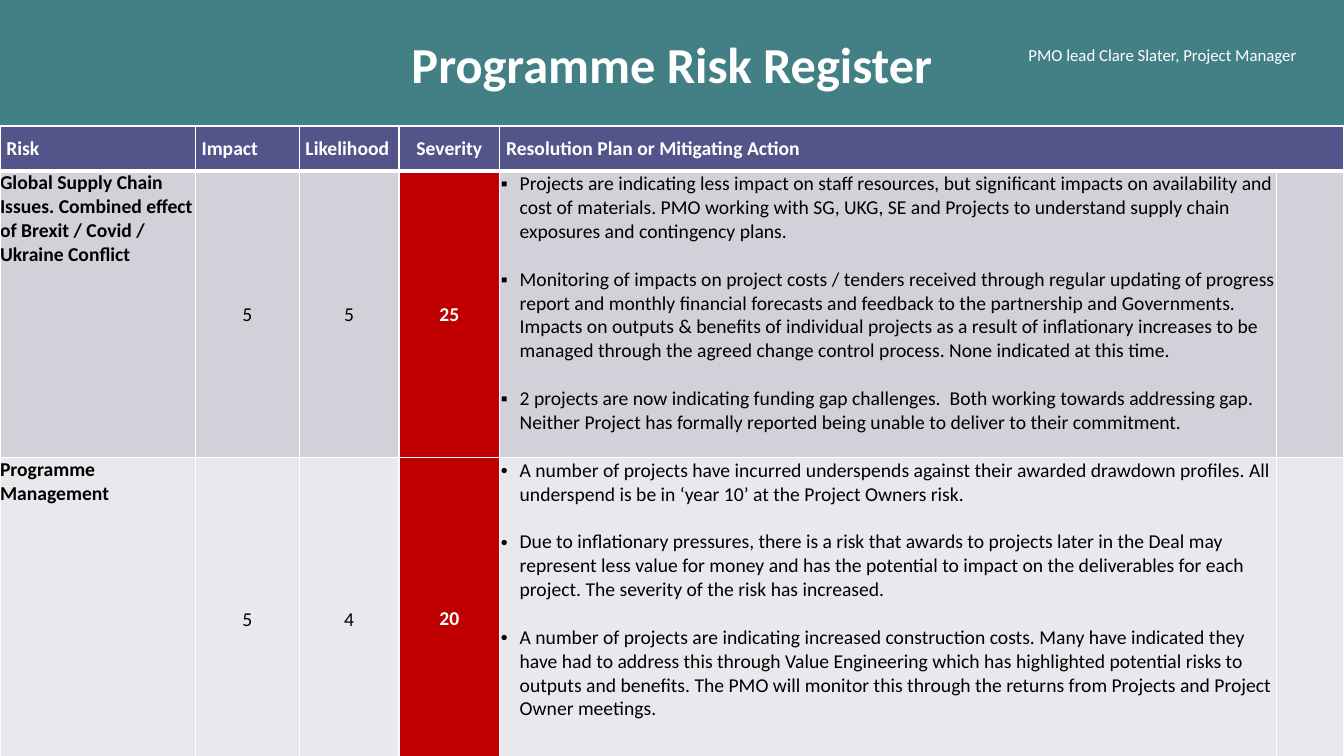
from lxml import etree
from pptx import Presentation
from pptx import util as u
from pptx.dml.color import RGBColor
from pptx.enum import text
from pptx.oxml import ns

PX = 9525
FONT = "Calibri"
WHITE = RGBColor(0xFF, 0xFF, 0xFF)
BLACK = RGBColor(0, 0, 0)
TEAL = RGBColor(0x43, 0x80, 0x86)
INDIGO = RGBColor(0x53, 0x54, 0x8A)
RED = RGBColor(0xC0, 0, 0)
BANDS = [RGBColor(0xD1, 0xD1, 0xDA), RGBColor(0xE9, 0xE9, 0xED)]

LEFT, CENTER = text.PP_ALIGN.LEFT, text.PP_ALIGN.CENTER
TOP, MIDDLE = text.MSO_ANCHOR.TOP, text.MSO_ANCHOR.MIDDLE
PADDED, TIGHT, FLUSH = (6, 3, 6, 3), (1, 1, 1, 0), (0, 0, 0, 0)

COLUMN_WIDTHS = [186, 99, 95, 96, 740, 64]
ROW_HEIGHTS = [43, 273, 307]
HEADINGS = ["Risk", "Impact", "Likelihood", "Severity",
            "Resolution Plan or Mitigating Action", ""]
RISKS = [
    ("Global Supply Chain Issues. Combined effect of Brexit / Covid / Ukraine Conflict",
     "5", "5", "25", "▪", [
         "Projects are indicating less impact on staff resources, but significant impacts on "
         "availability and cost of materials. PMO working with SG, UKG, SE and Projects to "
         "understand supply chain exposures and contingency plans.",
         "Monitoring of impacts on project costs / tenders received through regular updating of "
         "progress report and monthly financial forecasts and feedback to the partnership and "
         "Governments. Impacts on outputs & benefits of individual projects as a result of "
         "inflationary increases to be managed through the agreed change control process. "
         "None indicated at this time.",
         "2 projects are now indicating funding gap challenges.  Both working towards addressing "
         "gap. Neither Project has formally reported being unable to deliver to their commitment.",
     ]),
    ("Programme Management", "5", "4", "20", "•", [
        "A number of projects have incurred underspends against their awarded drawdown profiles. "
        "All underspend is be in ‘year 10’ at the Project Owners risk.",
        "Due to inflationary pressures, there is a risk that awards to projects later in the Deal "
        "may represent less value for money and has the potential to impact on the deliverables "
        "for each project. The severity of the risk has increased.",
        "A number of projects are indicating increased construction costs. Many have indicated "
        "they have had to address this through Value Engineering which has highlighted potential "
        "risks to outputs and benefits. The PMO will monitor this through the returns from "
        "Projects and Project Owner meetings.",
    ]),
]


def px(*lengths):
    return [length * PX for length in lengths]


def format_runs(paragraph, size, color, bold=False):
    for run in paragraph.runs:
        run.font.name = FONT
        run.font.size = u.Pt(size)
        run.font.bold = bold
        run.font.color.rgb = color


def add_bullet(paragraph, mark):
    properties = paragraph._p.get_or_add_pPr()
    properties.set("marL", str(18 * PX))
    properties.set("indent", str(-18 * PX))
    etree.SubElement(properties, ns.qn("a:buFont")).set("typeface", "Arial")
    etree.SubElement(properties, ns.qn("a:buChar")).set("char", mark)


def add_borders(cell, top=1, bottom=1):
    properties = cell._tc.get_or_add_tcPr()
    for side, width in (("L", 1), ("R", 1), ("T", top), ("B", bottom)):
        border = etree.SubElement(properties, ns.qn(f"a:ln{side}"), w=str(u.Pt(width)))
        paint = etree.SubElement(border, ns.qn("a:solidFill"))
        etree.SubElement(paint, ns.qn("a:srgbClr")).set("val", str(WHITE))


def style_cell(cell, fill, margins, anchor):
    cell.fill.solid()
    cell.fill.fore_color.rgb = fill
    (cell.margin_left, cell.margin_top,
     cell.margin_right, cell.margin_bottom) = px(*margins)
    cell.vertical_anchor = anchor


def write_cell(cell, wording, color, bold, align):
    cell.text_frame.text = wording
    paragraph = cell.text_frame.paragraphs[0]
    paragraph.alignment = align
    format_runs(paragraph, 14, color, bold)


def write_actions(cell, mark, actions):
    frame = cell.text_frame
    for number, action in enumerate(actions):
        paragraph = frame.add_paragraph() if number else frame.paragraphs[0]
        paragraph.text = action
        add_bullet(paragraph, mark)
        if number:
            paragraph.space_before = u.Pt(17)
        format_runs(paragraph, 14, BLACK)


def build_banner(slide, left, top, width, height):
    title = slide.shapes.title
    title.left, title.top, title.width, title.height = px(left, top, width, height)
    title.fill.solid()
    title.fill.fore_color.rgb = TEAL
    frame = title.text_frame
    frame.text = "Programme Risk Register"
    frame.auto_size = text.MSO_AUTO_SIZE.NONE
    frame.vertical_anchor = MIDDLE
    frame.paragraphs[0].alignment = CENTER
    format_runs(frame.paragraphs[0], 36, WHITE, True)

    lead = slide.shapes.add_textbox(*px(left + width - 310, top + 38, 281, 29)).text_frame
    lead.text = "PMO lead Clare Slater, Project Manager"
    lead.word_wrap = False
    lead.auto_size = text.MSO_AUTO_SIZE.SHAPE_TO_FIT_TEXT
    format_runs(lead.paragraphs[0], 12, WHITE)


def build_register(slide, left, top, width):
    register = slide.shapes.add_table(
        len(ROW_HEIGHTS), len(COLUMN_WIDTHS),
        *px(left, top, width, sum(ROW_HEIGHTS))).table
    for column, column_width in zip(register.columns, COLUMN_WIDTHS):
        column.width = column_width * PX
    for row, row_height in zip(register.rows, ROW_HEIGHTS):
        row.height = row_height * PX

    for index, heading in enumerate(HEADINGS):
        cell = register.cell(0, index)
        add_borders(cell, bottom=3)
        style_cell(cell, INDIGO, PADDED, MIDDLE)
        write_cell(cell, heading, WHITE, True, CENTER if heading == "Severity" else LEFT)
    register.cell(0, 4).merge(register.cell(0, 5))

    for number, (risk, impact, likelihood, severity, mark, actions) in enumerate(RISKS):
        band = BANDS[number]
        cells = list(register.rows[number + 1].cells)
        for cell in cells:
            add_borders(cell, top=1 if number else 3)
            style_cell(cell, band, TIGHT, TOP)
        style_cell(cells[0], band, FLUSH, TOP)
        write_cell(cells[0], risk, BLACK, True, LEFT)
        for cell, score in zip(cells[1:3], (impact, likelihood)):
            style_cell(cell, band, TIGHT, MIDDLE)
            write_cell(cell, score, BLACK, False, CENTER)
        style_cell(cells[3], RED, PADDED, MIDDLE)
        write_cell(cells[3], severity, WHITE, True, CENTER)
        write_actions(cells[4], mark, actions)


def main():
    deck = Presentation()
    deck.slide_width, deck.slide_height = px(1280, 720)
    slide = deck.slides.add_slide(deck.slide_layouts[5])
    build_banner(slide, 0, 0, 1280, 120)
    build_register(slide, 0, 120, 1280)
    deck.save("out.pptx")


if __name__ == "__main__":
    main()
